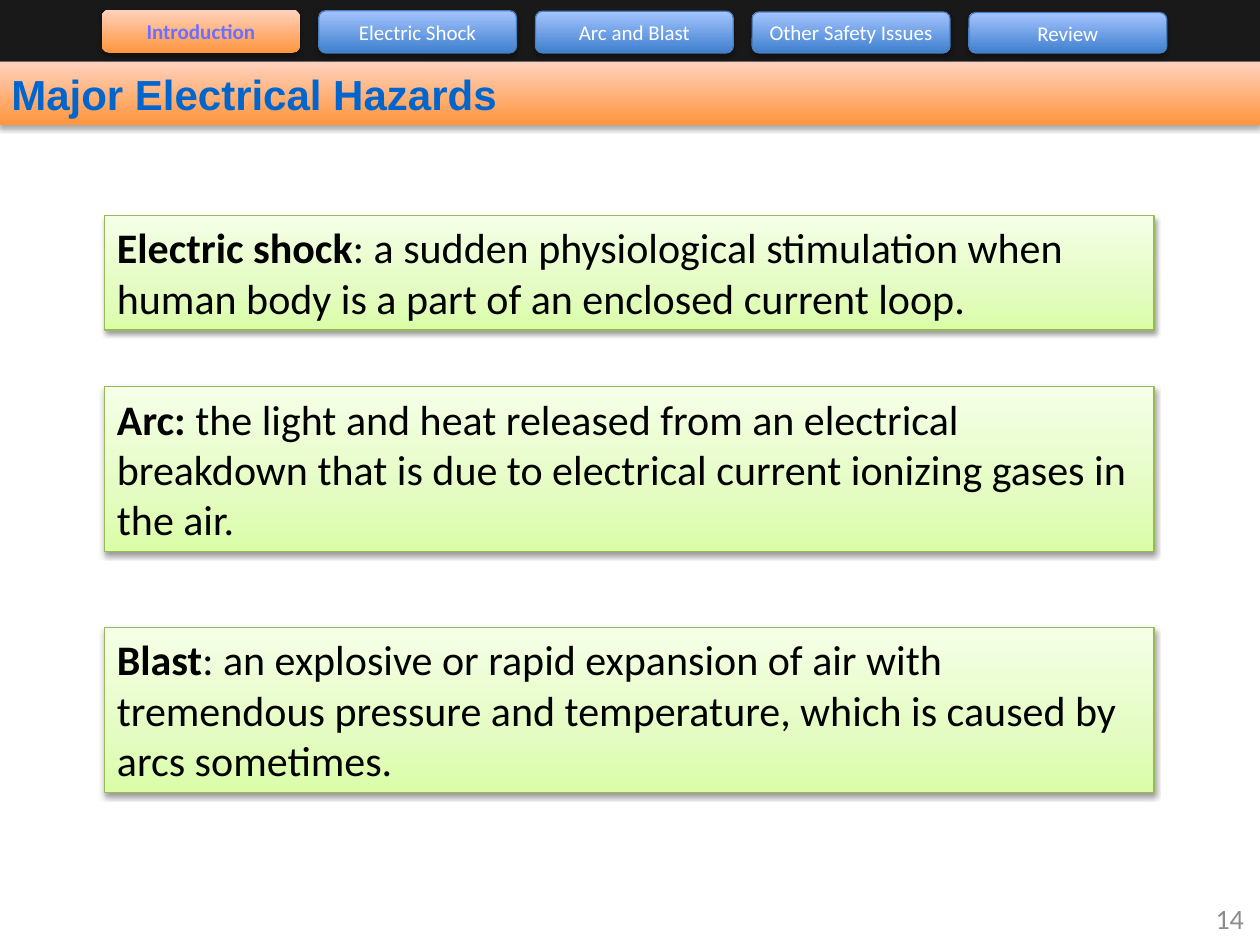
import copy

import pptx
import pptx.dml.color
import pptx.enum.shapes
import pptx.enum.text
import pptx.oxml
import pptx.oxml.ns
import pptx.util

Inches = pptx.util.Inches
Pt = pptx.util.Pt
RGBColor = pptx.dml.color.RGBColor
MSO_SHAPE = pptx.enum.shapes.MSO_SHAPE
MSO_ANCHOR = pptx.enum.text.MSO_ANCHOR
PP_ALIGN = pptx.enum.text.PP_ALIGN

BLACK = RGBColor(0x00, 0x00, 0x00)
WHITE = RGBColor(0xFF, 0xFF, 0xFF)
BAR = RGBColor(0x19, 0x19, 0x19)
TITLE_BLUE = RGBColor(0x00, 0x65, 0xCC)
ACTIVE_TEXT = RGBColor(0x6C, 0x6E, 0xFF)
BLUE_LINE = RGBColor(0x4B, 0x7E, 0xBC)
GREEN_LINE = RGBColor(0x98, 0xB9, 0x55)
NUMBER_GREY = RGBColor(0x8C, 0x8C, 0x8C)
ORANGE = [(0, RGBColor(0xFF, 0x95, 0x3E)), (1, RGBColor(0xFF, 0xD2, 0xBD))]
BLUE = [(0, RGBColor(0x3F, 0x80, 0xCE)), (1, RGBColor(0xA4, 0xC4, 0xFF))]
GREEN = [(0, RGBColor(0xDA, 0xFD, 0xA7)), (0.35, RGBColor(0xE4, 0xFC, 0xC2)),
         (1, RGBColor(0xF5, 0xFF, 0xE7))]

TITLE = "Major Electrical Hazards"
SECTIONS = ["Introduction", "Electric Shock", "Arc and Blast", "Other Safety Issues", "Review"]
ACTIVE_SECTION = "Introduction"
HAZARDS = [
    (1.71, 0.91, "Electric shock",
     ": a sudden physiological stimulation when human body is a part of an enclosed current loop."),
    (3.07, 1.31, "Arc: ",
     "the light and heat released from an electrical breakdown that is due to electrical "
     "current ionizing gases in the air."),
    (4.98, 1.31, "Blast",
     ": an explosive or rapid expansion of air with tremendous pressure and temperature, "
     "which is caused by arcs sometimes."),
]
PAGE_NUMBER = "14"

TAB_LEFT, TAB_TOP, TAB_BOTTOM = 0.81, 0.08, 0.42
TAB_WIDTH, TAB_PITCH, TAB_STEP = 1.57, 1.72, 0.005


def place(shape, left, top, width, height):
    shape.left, shape.top = Inches(left), Inches(top)
    shape.width, shape.height = Inches(width), Inches(height)


def fill_gradient(shape, colours):
    shape.fill.gradient()
    shape.fill.gradient_angle = 90
    stop_list = shape._element.spPr.find(".//" + pptx.oxml.ns.qn("a:gsLst"))
    for _ in colours[2:]:
        stop_list.append(copy.deepcopy(stop_list[0]))
    for stop, (position, colour) in zip(shape.fill.gradient_stops, colours):
        stop.position = position
        stop.color.rgb = colour


def set_line(shape, colour):
    if colour is None:
        shape.line.fill.background()
    else:
        shape.line.color.rgb = colour
        shape.line.width = Pt(0.75)


def add_shadow(shape, opacity, distance):
    shape.shadow.inherit = False
    effects = shape._element.spPr.find(pptx.oxml.ns.qn("a:effectLst"))
    effects.append(pptx.oxml.parse_xml(
        f'<a:outerShdw {pptx.oxml.ns.nsdecls("a")} blurRad="{Pt(3.1)}" dist="{Pt(distance)}" '
        f'dir="5400000" rotWithShape="0"><a:srgbClr val="000000">'
        f'<a:alpha val="{opacity * 1000}"/></a:srgbClr></a:outerShdw>'))


def style_shape(shape, colours, line, opacity=35, distance=1.8):
    fill_gradient(shape, colours)
    set_line(shape, line)
    add_shadow(shape, opacity, distance)


def write_text(shape, runs, size, colour, font="Calibri",
               alignment=PP_ALIGN.LEFT, anchor=MSO_ANCHOR.TOP):
    frame = shape.text_frame
    frame.word_wrap = True
    frame.auto_size = pptx.enum.text.MSO_AUTO_SIZE.NONE
    frame.vertical_anchor = anchor
    paragraph = frame.paragraphs[0]
    paragraph.alignment = alignment
    paragraph.font.name = font
    paragraph.font.size = Pt(size)
    paragraph.font.color.rgb = colour
    for text, bold in runs:
        run = paragraph.add_run()
        run.text = text
        run.font.bold = bold


def add_tab(slide, index, name):
    active = name == ACTIVE_SECTION
    top = TAB_TOP + index * TAB_STEP
    tab = slide.shapes.add_shape(MSO_SHAPE.ROUNDED_RECTANGLE, 0, 0, 0, 0)
    place(tab, TAB_LEFT + index * TAB_PITCH, top, TAB_WIDTH, TAB_BOTTOM - top)
    style_shape(tab, ORANGE if active else BLUE, None if active else BLUE_LINE)
    write_text(tab, [(name, active)], 12, ACTIVE_TEXT if active else WHITE,
               alignment=PP_ALIGN.CENTER, anchor=MSO_ANCHOR.MIDDLE)


def add_hazard(slide, top, height, term, definition):
    box = slide.shapes.add_shape(MSO_SHAPE.RECTANGLE, 0, 0, 0, 0)
    place(box, 0.83, top, 8.33, height)
    style_shape(box, GREEN, GREEN_LINE, 38, 1.6)
    write_text(box, [(term, True), (definition, False)], 24, BLACK)


def main():
    presentation = pptx.Presentation()
    presentation.slide_width, presentation.slide_height = Inches(10), Inches(7.5)
    slide = presentation.slides.add_slide(presentation.slide_layouts[5])

    title = slide.shapes.title
    place(title, -0.01, 0.49, 10.01, 0.5)
    style_shape(title, ORANGE, None)
    write_text(title, [(TITLE, True)], 24, TITLE_BLUE, "Arial")

    bar = slide.shapes.add_shape(MSO_SHAPE.RECTANGLE, 0, 0, Inches(10), Inches(0.49))
    bar.shadow.inherit = False
    bar.fill.solid()
    bar.fill.fore_color.rgb = BAR
    set_line(bar, None)

    for index, name in enumerate(SECTIONS):
        add_tab(slide, index, name)
    for hazard in HAZARDS:
        add_hazard(slide, *hazard)

    number = slide.shapes.add_textbox(Inches(9.48), Inches(7.09), Inches(0.49), Inches(0.4))
    write_text(number, [(PAGE_NUMBER, False)], 16, NUMBER_GREY,
               alignment=PP_ALIGN.RIGHT, anchor=MSO_ANCHOR.MIDDLE)

    presentation.save("out.pptx")


if __name__ == "__main__":
    main()
